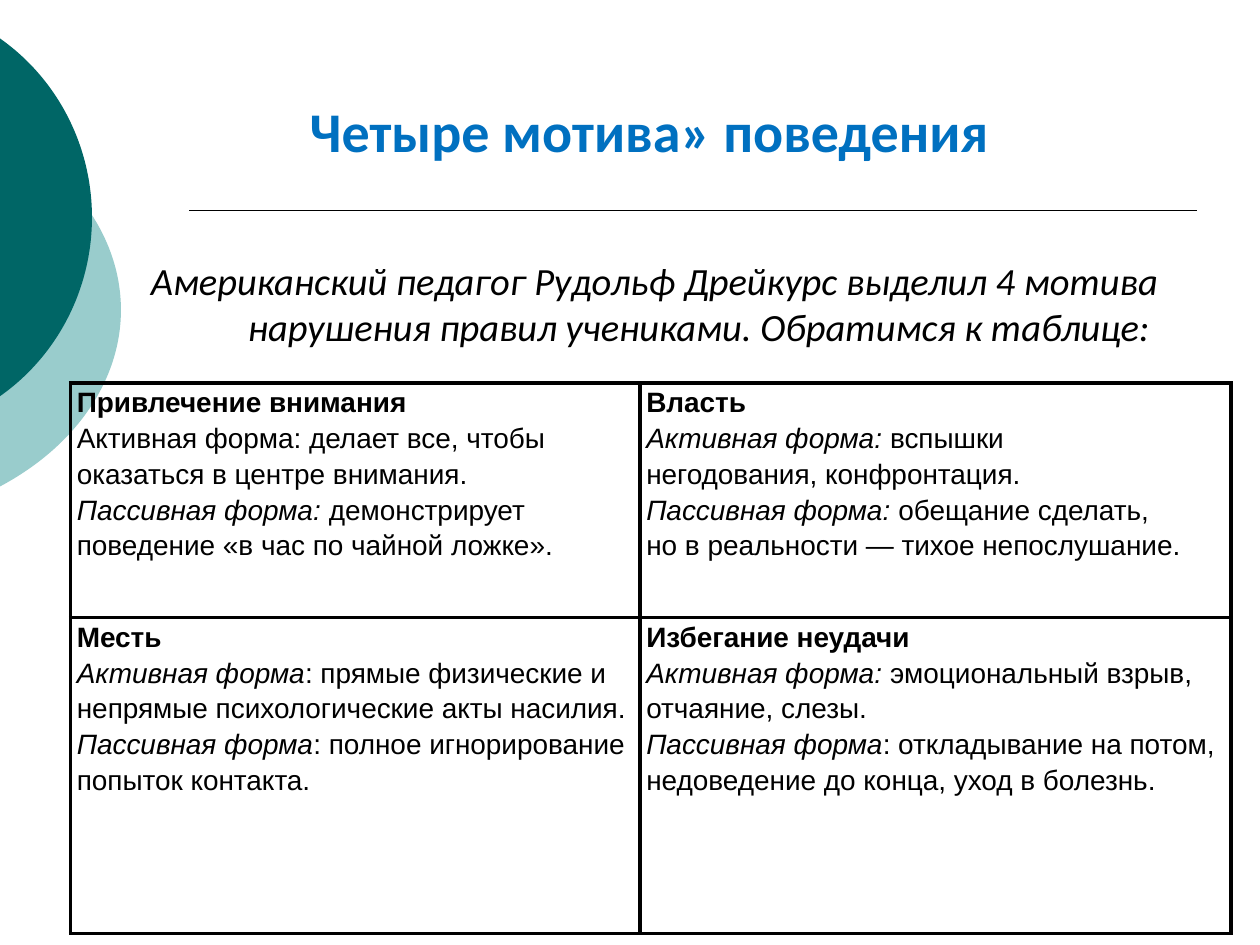
"""Build a slide with a table of the four motives behind pupils' behaviour."""
from lxml import etree
from pptx import Presentation
from pptx.dml.color import RGBColor
from pptx.enum.shapes import MSO_CONNECTOR, MSO_SHAPE
from pptx.enum.text import MSO_ANCHOR, PP_ALIGN
from pptx.oxml.ns import qn
from pptx.util import Inches, Pt

STRAIGHT, OVAL = MSO_CONNECTOR.STRAIGHT, MSO_SHAPE.OVAL
TOP = MSO_ANCHOR.TOP
CENTER, RIGHT = PP_ALIGN.CENTER, PP_ALIGN.RIGHT

BLACK, BLUE = "000000", "0070C0"
TITLE = "Четыре мотива» поведения"
INTRO = ("Американский педагог Рудольф Дрейкурс выделил 4 мотива "
         "нарушения правил учениками. Обратимся к таблице: ")
ELLIPSES = [
    ("99CCCC", -3.54, 0.75, 4.5, 3.42),
    ("006666", -2.65, 0, 3.38, 3.45),
]
COLUMN_WIDTHS = [4.52, 4.69]
ROW_HEIGHTS = [1.86, 2.51]
MOTIVES = [
    [
        ("Привлечение внимания", [
            ("", "Активная форма: делает все, чтобы оказаться в центре внимания. "),
            ("Пассивная форма:", " демонстрирует \nповедение «в час по чайной ложке»."),
        ]),
        ("Власть", [
            ("Активная форма: ", "вспышки \nнегодования, конфронтация. "),
            ("Пассивная форма: ", "обещание сделать,\nно в реальности — тихое непослушание."),
        ]),
    ],
    [
        ("Месть", [
            ("Активная форма", ": прямые физические и непрямые психологические акты насилия."),
            ("Пассивная форма", ": полное игнорирование попыток контакта."),
        ]),
        ("Избегание неудачи ", [
            ("Активная форма: ", "эмоциональный взрыв, \nотчаяние, слезы."),
            ("Пассивная форма", ": откладывание на потом, \nнедоведение до конца, уход в болезнь."),
        ]),
    ],
]


def color(value):
    return RGBColor.from_string(value)


def add_span(para, text, font, size, shade=BLACK, bold=False, italic=False):
    for index, line in enumerate(text.split("\n")):
        if index:
            para.add_line_break()
        span = para.add_run()
        span.text = line
        span.font.name, span.font.size = font, Pt(size)
        span.font.bold, span.font.italic = bold, italic
        span.font.color.rgb = color(shade)


def add_ellipse(page, shade, *frame):
    shape = page.shapes.add_shape(OVAL, *map(Inches, frame))
    shape.shadow.inherit = False
    shape.fill.solid()
    shape.fill.fore_color.rgb = color(shade)
    shape.line.fill.background()


def add_rule(page):
    rule = page.shapes.add_connector(
        STRAIGHT, Inches(1.5), Inches(1.67), Inches(9.5), Inches(1.67))
    rule.line.color.rgb = color(BLACK)
    rule.line.width = Pt(1)
    etree.SubElement(rule._element.spPr, qn("a:effectLst"))


def add_borders(cell):
    properties = cell._tc.get_or_add_tcPr()
    for side in ("lnL", "lnR", "lnT", "lnB"):
        border = etree.SubElement(properties, qn(f"a:{side}"), w=str(Pt(2.25)))
        fill = etree.SubElement(border, qn("a:solidFill"))
        etree.SubElement(fill, qn("a:srgbClr"), val=BLACK)


def fill_cell(cell, heading, forms):
    add_borders(cell)
    cell.fill.background()
    cell.margin_left = cell.margin_right = Inches(0.05)
    cell.margin_top = cell.margin_bottom = 0
    para = cell.text_frame.paragraphs[0]
    para.line_spacing = 1.15
    add_span(para, heading, "Arial", 16, bold=True)
    for label, text in forms:
        para.add_line_break()
        if label:
            add_span(para, label, "Arial", 16, italic=True)
        add_span(para, text, "Arial", 16)


def add_motives(page):
    table = page.shapes.add_table(
        len(ROW_HEIGHTS), len(COLUMN_WIDTHS), Inches(0.56), Inches(3.04),
        Inches(sum(COLUMN_WIDTHS)), Inches(sum(ROW_HEIGHTS))).table
    table.first_row = table.horz_banding = False
    for column, width in zip(table.columns, COLUMN_WIDTHS):
        column.width = Inches(width)
    for row, height, motives in zip(table.rows, ROW_HEIGHTS, MOTIVES):
        row.height = Inches(height)
        for cell, (heading, forms) in zip(row.cells, motives):
            fill_cell(cell, heading, forms)


def add_heading(page):
    box = page.shapes.add_textbox(Inches(1.02), Inches(0.72), Inches(8.27), Inches(2.49))
    frame = box.text_frame
    frame.word_wrap = True
    frame.vertical_anchor = TOP
    title = frame.paragraphs[0]
    title.alignment = CENTER
    add_span(title, TITLE, "Calibri", 32, BLUE, bold=True)
    intro = frame.add_paragraph()
    intro.alignment = RIGHT
    intro.space_before = Pt(53)
    add_span(intro, INTRO, "Calibri", 22, italic=True)


def main():
    deck = Presentation()
    deck.slide_width, deck.slide_height = Inches(10), Inches(7.5)
    page = deck.slides.add_slide(deck.slide_layouts[6])
    for ellipse in ELLIPSES:
        add_ellipse(page, *ellipse)
    add_rule(page)
    add_motives(page)
    add_heading(page)
    deck.save("out.pptx")


if __name__ == "__main__":
    main()
